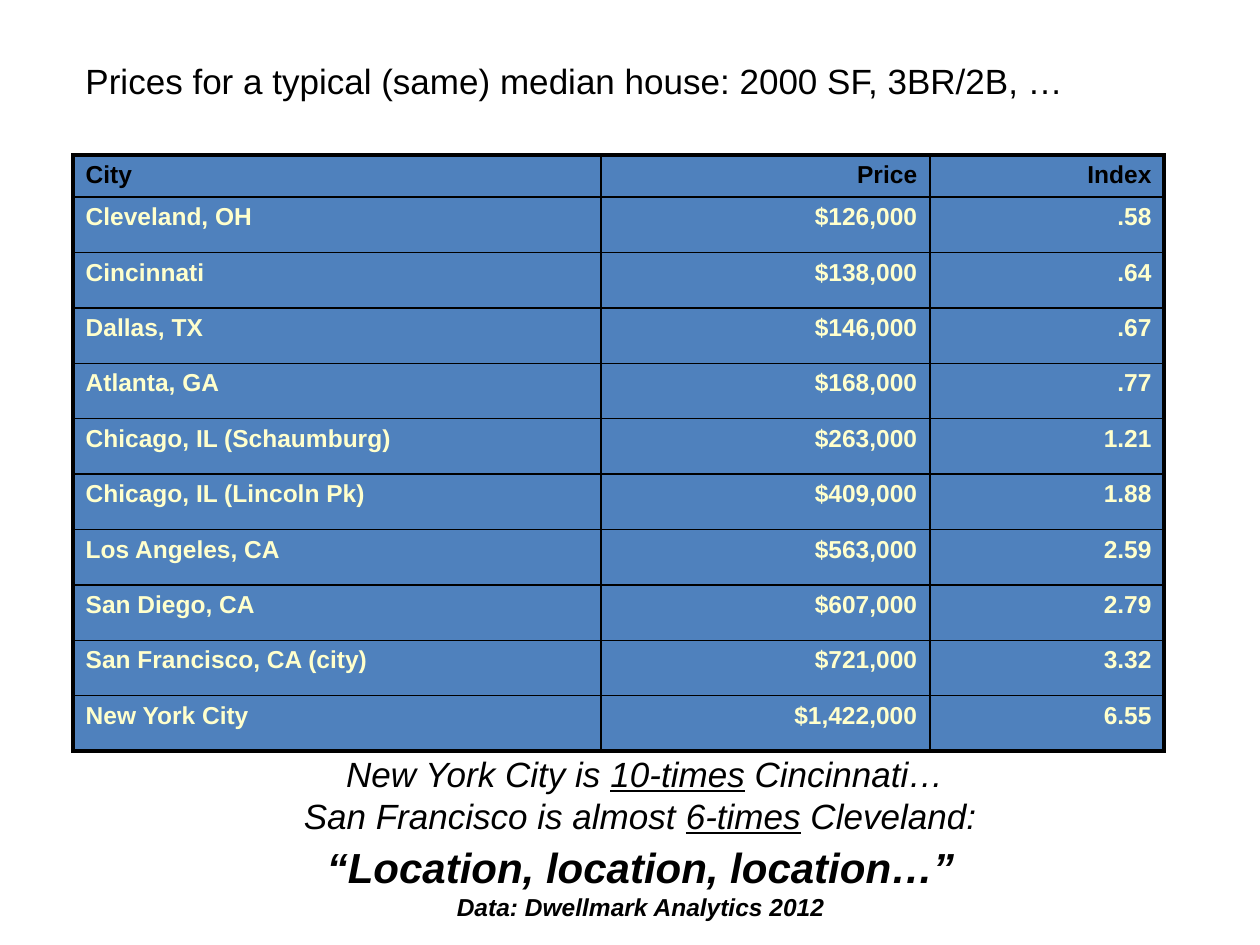
"""Build a slide comparing the price of a typical house across cities."""
from dataclasses import dataclass

from lxml import etree
from pptx import Presentation
from pptx import util as u
from pptx.dml.color import RGBColor
from pptx.enum import text
from pptx.oxml.ns import qn

HEADING = "Prices for a typical (same) median house: 2000 SF, 3BR/2B, …"
HEADER = ("City", "Price", "Index")
CITIES = [
    ("Cleveland, OH", "$126,000", ".58"),
    ("Cincinnati", "$138,000", ".64"),
    ("Dallas, TX", "$146,000", ".67"),
    ("Atlanta, GA", "$168,000", ".77"),
    ("Chicago, IL (Schaumburg)", "$263,000", "1.21"),
    ("Chicago, IL (Lincoln Pk)", "$409,000", "1.88"),
    ("Los Angeles, CA", "$563,000", "2.59"),
    ("San Diego, CA", "$607,000", "2.79"),
    ("San Francisco, CA (city)", "$721,000", "3.32"),
    ("New York City", "$1,422,000", "6.55"),
]
COMPARISONS = [
    (" New York City is ", "10-times", " Cincinnati…"),
    ("San Francisco is almost ", "6-times", " Cleveland:"),
]
MOTTO = "“Location, location, location…”"
CREDIT = "Data: Dwellmark Analytics 2012"

COLUMN_WIDTHS = (4.19, 2.61, 1.86)
HEADER_HEIGHT, CITY_HEIGHT = 0.33, 0.44


@dataclass(frozen=True)
class Theme:
    """Colours, type sizes and line widths."""

    font: str = "Arial"
    ink: str = "000000"
    city_ink: str = "FFFFCC"
    cell: str = "4F81BD"
    body: int = 20
    motto: int = 24
    small: int = 14
    outer: float = 2.25
    inner: float = 1


THEME = Theme()


def style(paragraph, size, color=THEME.ink, bold=False, italic=False, align=text.PP_ALIGN.LEFT):
    """Set the font and alignment of a paragraph."""
    paragraph.alignment = align
    font = paragraph.font
    font.name, font.size = THEME.font, u.Pt(size)
    font.bold, font.italic = bold, italic
    font.color.rgb = RGBColor.from_string(color)


def add_lines(slide, box, lines, inset=None):
    """Add a text box of (runs, style) lines, underlining every second run."""
    frame = slide.shapes.add_textbox(*map(u.Inches, box)).text_frame
    frame.word_wrap = True
    if inset is not None:
        frame.margin_left = frame.margin_top = u.Inches(inset)
        frame.margin_right = frame.margin_bottom = u.Inches(inset)
    for number, (runs, look) in enumerate(lines):
        paragraph = frame.add_paragraph() if number else frame.paragraphs[0]
        style(paragraph, **look)
        for position, words in enumerate(runs):
            run = paragraph.add_run()
            run.text = words
            if position % 2:
                run.font.underline = True


def set_borders(cell, widths):
    """Draw the left, right, top and bottom borders of a cell."""
    properties = cell._tc.get_or_add_tcPr()
    for position, (side, width) in enumerate(zip(("lnL", "lnR", "lnT", "lnB"), widths)):
        line = etree.Element(qn(f"a:{side}"), w=str(u.Pt(width)))
        fill = etree.SubElement(line, qn("a:solidFill"))
        etree.SubElement(fill, qn("a:srgbClr"), val=THEME.ink)
        properties.insert(position, line)


def add_prices(slide):
    """Add the table of cities, prices and indexes."""
    rows = [HEADER, *CITIES]
    last_row, last_column = len(rows) - 1, len(HEADER) - 1
    height = HEADER_HEIGHT + CITY_HEIGHT * len(CITIES)
    box = (0.58, 1.23, sum(COLUMN_WIDTHS), height)
    prices = slide.shapes.add_table(len(rows), len(HEADER), *map(u.Inches, box)).table
    for column, width in zip(prices.columns, COLUMN_WIDTHS):
        column.width = u.Inches(width)
    for r, values in enumerate(rows):
        prices.rows[r].height = u.Inches(CITY_HEIGHT if r else HEADER_HEIGHT)
        for c, value in enumerate(values):
            cell = prices.cell(r, c)
            cell.text = value
            style(
                cell.text_frame.paragraphs[0],
                THEME.small,
                color=THEME.city_ink if r else THEME.ink,
                bold=True,
                align=text.PP_ALIGN.RIGHT if c else text.PP_ALIGN.LEFT,
            )
            cell.fill.solid()
            cell.fill.fore_color.rgb = RGBColor.from_string(THEME.cell)
            edges = (c == 0, c == last_column, r == 0, r == last_row)
            set_borders(cell, [THEME.outer if edge else THEME.inner for edge in edges])


def main():
    """Assemble and save the slide."""
    deck = Presentation()
    deck.slide_width, deck.slide_height = u.Inches(10), u.Inches(7.5)
    slide = deck.slides.add_slide(deck.slide_layouts[6])
    centred = {"italic": True, "align": text.PP_ALIGN.CENTER}
    comparison = {"size": THEME.body, **centred}
    motto = {"size": THEME.motto, "bold": True, **centred}
    credit = {**motto, "size": THEME.small}
    add_lines(slide, (0.58, 0.42, 9.42, 0.43), [((HEADING,), {"size": THEME.body})])
    add_lines(slide, (1.83, 5.92, 6.5, 0.77), [(runs, comparison) for runs in COMPARISONS])
    add_lines(slide, (1.21, 6.68, 7.75, 0.64), [((MOTTO,), motto), ((CREDIT,), credit)], inset=0)
    add_prices(slide)
    deck.save("out.pptx")


if __name__ == "__main__":
    main()
